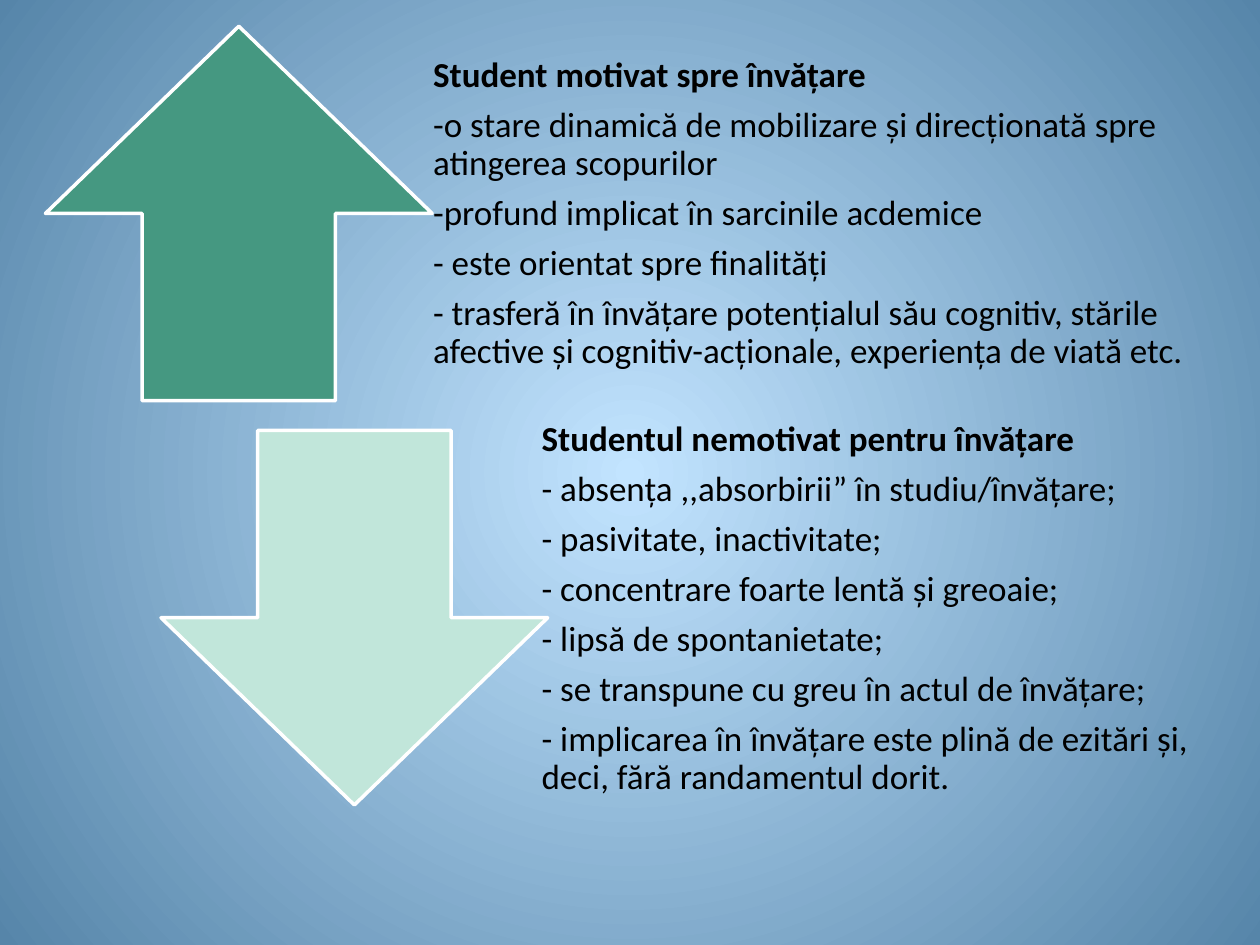
from lxml import etree
from pptx import Presentation
from pptx.dml.color import RGBColor
from pptx.enum import shapes, text
from pptx.oxml.ns import qn
from pptx.util import Pt

COLOURS = {
    "centre": "C2E4FF",
    "edge": "5685A9",
    "motivated": "459881",
    "unmotivated": "C1E6DA",
    "outline": "FFFFFF",
    "text": "000000",
}
ARROW_SIZE = (221, 214)

MOTIVATED = [
    "Student motivat spre învățare",
    "-o stare dinamică de mobilizare și direcționată spre atingerea scopurilor",
    "-profund implicat în sarcinile acdemice",
    "- este orientat spre finalități",
    "- trasferă în învățare potențialul său cognitiv, stările afective și "
    "cognitiv-acționale, experiența de viată etc.",
]
UNMOTIVATED = [
    "Studentul nemotivat pentru învățare",
    "- absența ,,absorbirii” în studiu/învățare;",
    "- pasivitate, inactivitate;",
    "- concentrare foarte lentă și greoaie;",
    "- lipsă de spontanietate;",
    "- se transpune cu greu în actul de învățare;",
    "- implicarea în învățare este plină de ezitări și, deci, fără randamentul dorit.",
]


def colour(name):
    return RGBColor.from_string(COLOURS[name])


class SlideBuilder:
    font = "Calibri"
    size = 20
    inset = 11.5

    def __init__(self, page):
        self.page = page

    def radial_background(self, *stops):
        fill = self.page.background.fill
        fill.gradient()
        for stop, name in zip(fill.gradient_stops, stops):
            stop.color.rgb = colour(name)
        # Turn the linear gradient into a circle around the slide centre
        gradient = self.page.element.find(".//" + qn("a:gradFill"))
        gradient.remove(gradient.find(qn("a:lin")))
        circle = etree.SubElement(gradient, qn("a:path"))
        circle.set("path", "circle")
        focus = etree.SubElement(circle, qn("a:fillToRect"))
        for side in "ltrb":
            focus.set(side, "50000")

    def arrow(self, kind, left, top, fill):
        arrow = self.page.shapes.add_shape(
            kind, Pt(left), Pt(top), *map(Pt, ARROW_SIZE))
        arrow.shadow.inherit = False
        arrow.fill.solid()
        arrow.fill.fore_color.rgb = colour(fill)
        arrow.line.color.rgb = colour("outline")
        arrow.line.width = Pt(2)

    def heading_and_points(self, left, top, width, height, lines):
        box = self.page.shapes.add_textbox(*map(Pt, (left, top, width, height)))
        frame = box.text_frame
        frame.word_wrap = True
        frame.vertical_anchor = text.MSO_ANCHOR.MIDDLE
        frame.margin_left = frame.margin_right = frame.margin_bottom = Pt(self.inset)
        frame.margin_top = 0
        frame.text = "\n".join(lines)
        for index, para in enumerate(frame.paragraphs):
            para.line_spacing = 0.9
            para.space_after = Pt(0.35 * self.size)
            for span in para.runs:
                span.font.name = self.font
                span.font.size = Pt(self.size)
                span.font.bold = index == 0
                span.font.color.rgb = colour("text")


def main():
    deck = Presentation()
    deck.slide_width, deck.slide_height = Pt(720), Pt(540)
    builder = SlideBuilder(deck.slides.add_slide(deck.slide_layouts[6]))
    builder.radial_background("centre", "edge")

    # Motivated student
    builder.arrow(shapes.MSO_SHAPE.UP_ARROW, 26, 15, "motivated")
    builder.heading_and_points(236, 21, 463, 214, MOTIVATED)

    # Unmotivated student
    builder.arrow(shapes.MSO_SHAPE.DOWN_ARROW, 92, 246, "unmotivated")
    builder.heading_and_points(298, 202, 418, 304, UNMOTIVATED)

    deck.save("out.pptx")


if __name__ == "__main__":
    main()
